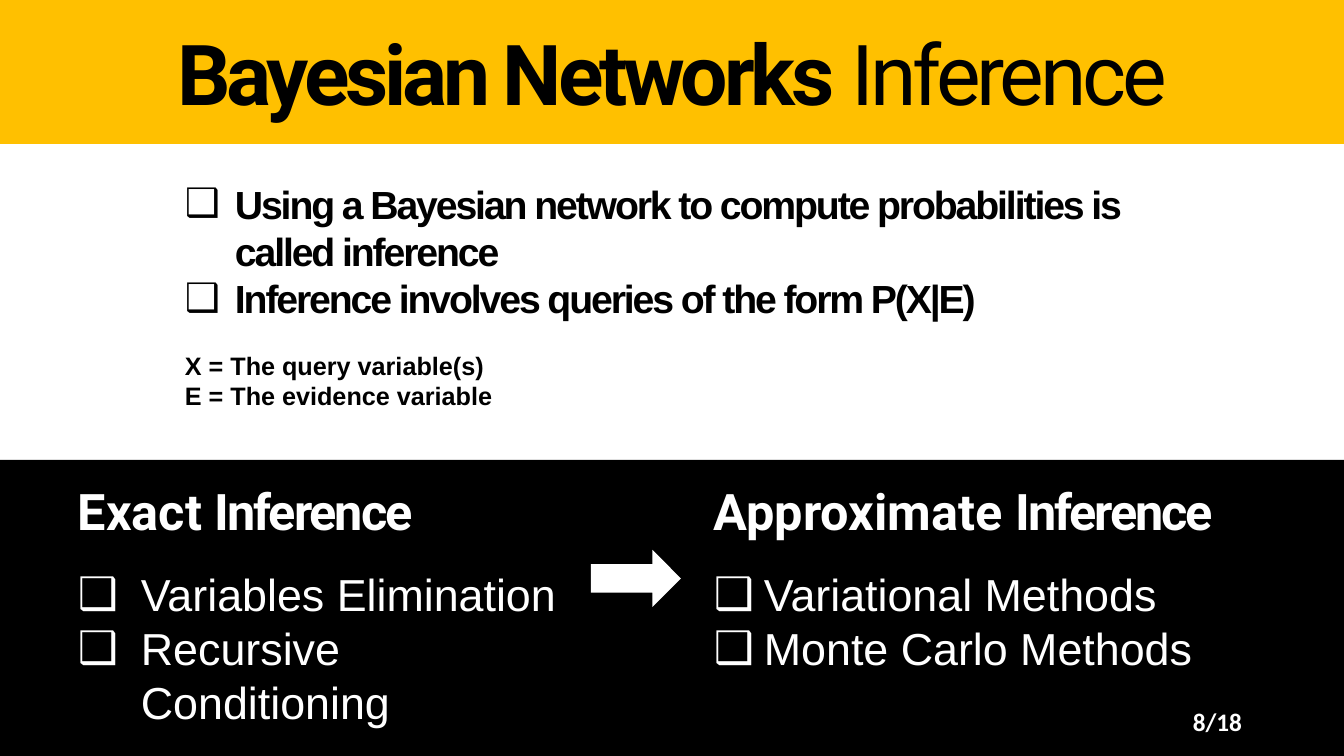
"""Build the Bayesian network inference slide."""
from lxml import etree
from pptx import Presentation
from pptx.dml.color import RGBColor
from pptx.enum.shapes import MSO_SHAPE
from pptx.enum.text import MSO_ANCHOR, MSO_AUTO_SIZE, PP_ALIGN
from pptx.oxml.ns import qn
from pptx.util import Emu, Pt

RECT, ARROW = MSO_SHAPE.RECTANGLE, MSO_SHAPE.RIGHT_ARROW
MIDDLE, FIXED = MSO_ANCHOR.MIDDLE, MSO_AUTO_SIZE.NONE
LEFT, CENTER, RIGHT = PP_ALIGN.LEFT, PP_ALIGN.CENTER, PP_ALIGN.RIGHT


class Theme:
    """Colours and type styles as (font, points, bold, colour)."""
    gold = RGBColor.from_string("FFC000")
    black = RGBColor.from_string("000000")
    white = RGBColor.from_string("FFFFFF")
    title = ("Roboto", 60, None, black)
    point = ("Arial", 28, True, black)
    note = ("Arial", 18, True, black)
    head = ("Roboto", 36, True, white)
    item = ("Arial", 32, False, white)
    page = ("Calibri", 18, True, white)


def px(*nums):
    return [Emu(round(n * 914400 / 100.8)) for n in nums]


def write(frame, paras, align=LEFT):
    """Fill a frame with (style, runs, indent, gap), a run being (text, spacing, bold)."""
    frame.word_wrap = True
    frame.auto_size = FIXED
    for i, (style, runs, indent, gap) in enumerate(paras):
        para = frame.add_paragraph() if i else frame.paragraphs[0]
        para.alignment = align
        para.space_before = Pt(gap)
        if indent:
            size = px(indent)[0]
            props = para._p.get_or_add_pPr()
            props.set("marL", str(size))
            props.set("indent", str(-size))
            etree.SubElement(props, qn("a:buFont")).set("typeface", "Arial")
            etree.SubElement(props, qn("a:buChar")).set("char", "❑")
        font = para.font
        font.name, points, font.bold, color = style
        font.size = Pt(points)
        font.color.rgb = color
        for text, space, bold in runs:
            run = para.add_run()
            run.text = text
            run.font.bold = bold
            if space:
                run._r.get_or_add_rPr().set("spc", str(space))


deck = Presentation()
deck.slide_width, deck.slide_height = px(1344, 756)
slide = deck.slides.add_slide(deck.slide_layouts[5])
shapes = slide.shapes

title = shapes.title
title.left, title.top, title.width, title.height = px(0, 0, 1344, 144)
title.fill.solid()
title.fill.fore_color.rgb = Theme.gold
title.text_frame.vertical_anchor = MIDDLE
write(title.text_frame, [
    (Theme.title, [("Bayesian Networks ", -300, True), ("Inference", -300, False)], 0, 0),
], CENTER)

for kind, box, color in [
    (RECT, (0, 460, 1344, 296), Theme.black),
    (ARROW, (591, 550, 90, 57), Theme.white),
]:
    shape = shapes.add_shape(kind, *px(*box))
    shape.shadow.inherit = False
    shape.fill.solid()
    shape.fill.fore_color.rgb = color
    shape.line.fill.background()

intro = shapes.add_textbox(*px(175, 175, 994, 270))
write(intro.text_frame, [
    (Theme.point, [("Using a Bayesian network to compute probabilities is called inference",
                    -150, None)], 50, 0),
    (Theme.point, [("Inference involves queries of the form P(X|E)", -150, None)], 50, 0),
    (Theme.note, [("X = The query variable(s)", 0, None)], 0, 21),
    (Theme.note, [("E = The evidence variable", 0, None)], 0, 0),
])

for left, width, indent, name, items in [
    (68, 519, 63, "Exact ", ["Variables Elimination", "Recursive Conditioning"]),
    (704, 552, 50, "Approximate ", ["Variational Methods", "Monte Carlo Methods"]),
]:
    panel = shapes.add_textbox(*px(left, 475, width, 268))
    paras = [(Theme.head, [(name, 0, None), ("Inference", -150, None)], 0, 0)]
    for i, item in enumerate(items):
        paras.append((Theme.item, [(item, 0, None)], indent, 0 if i else 19))
    write(panel.text_frame, paras)

page = shapes.add_textbox(*px(950, 701, 302, 40))
page.text_frame.vertical_anchor = MIDDLE
write(page.text_frame, [(Theme.page, [("8/18", 0, None)], 0, 0)], RIGHT)

deck.save("out.pptx")
